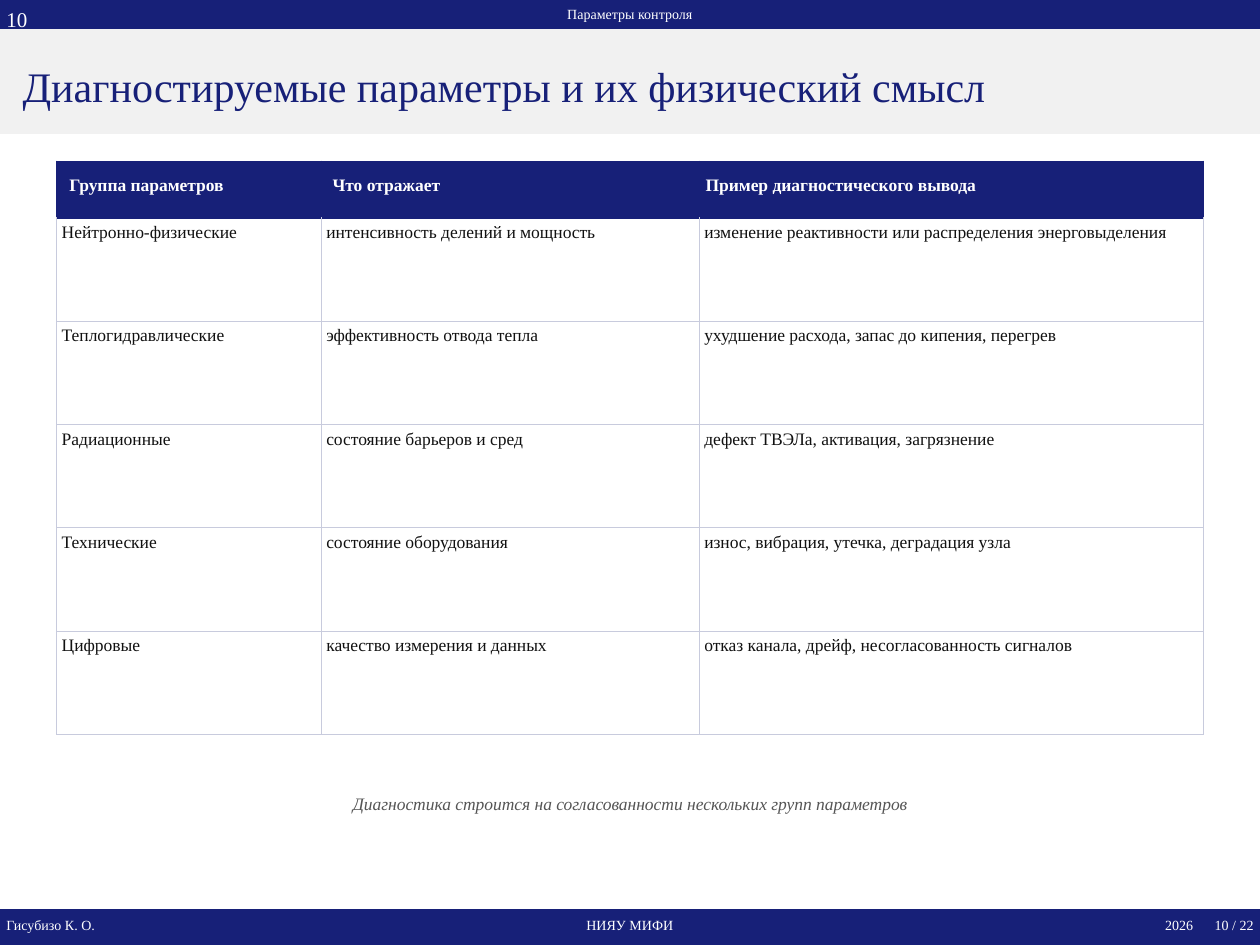
from lxml import etree
from pptx import Presentation
from pptx.dml.color import RGBColor
from pptx.enum.shapes import MSO_SHAPE
from pptx.enum.text import MSO_ANCHOR, PP_ALIGN
from pptx.oxml.ns import qn
from pptx.util import Inches, Pt

RECT = MSO_SHAPE.RECTANGLE
TOP, MIDDLE = MSO_ANCHOR.TOP, MSO_ANCHOR.MIDDLE
LEFT, CENTER, RIGHT = PP_ALIGN.LEFT, PP_ALIGN.CENTER, PP_ALIGN.RIGHT
NAVY, WHITE, GREY = "172078", "FFFFFF", "F1F1F1"
INK, MUTED, RULE = "111111", "555555", "C8CBDD"
FONT = "Times New Roman"


def color(target, tone):
    target.rgb = RGBColor.from_string(tone)


def write(frame, text, size, tone, align=LEFT, bold=False, italic=False):
    para = frame.paragraphs[0]
    para.alignment = align
    run = para.add_run()
    run.text = text
    run.font.name = FONT
    run.font.size = Pt(size)
    run.font.bold = bold
    run.font.italic = italic
    color(run.font.color, tone)


deck = Presentation()
deck.slide_width = Inches(10)
deck.slide_height = Inches(7.5)
slide = deck.slides.add_slide(deck.slide_layouts[6])

for top, height, tone in [(0, 0.24, NAVY), (0.24, 0.82, GREY), (7.22, 0.28, NAVY)]:
    band = slide.shapes.add_shape(RECT, 0, Inches(top), Inches(10), Inches(height))
    band.shadow.inherit = False
    band.fill.solid()
    color(band.fill.fore_color, tone)
    color(band.line.color, tone)
    band.line.width = Pt(1)

labels = [
    (0.2, 0.04, 9.6, 0.14, "Параметры контроля", 8, WHITE, CENTER, False),
    (0.18, 0.37, 9.6, 0.62, "Диагностируемые параметры и их физический смысл", 24, NAVY, LEFT, False),
    (0.05, 7.27, 2.4, 0.14, "Гисубизо К. О.", 8, WHITE, LEFT, False),
    (3.85, 7.27, 2.3, 0.14, "НИЯУ МИФИ", 8, WHITE, CENTER, False),
    (8.47, 7.27, 1, 0.14, "2026", 8, WHITE, RIGHT, False),
    (9.5, 7.27, 0.45, 0.14, "10 / 22", 8, WHITE, RIGHT, False),
    (0.8, 6.25, 8.4, 0.25, "Диагностика строится на согласованности нескольких групп параметров",
     10, MUTED, CENTER, True),
    (0.05, 0.05, 0.18, 0.2, "10", 12, WHITE, LEFT, False),
]
for left, top, width, height, text, size, tone, align, italic in labels:
    label = slide.shapes.add_textbox(Inches(left), Inches(top), Inches(width), Inches(height))
    frame = label.text_frame
    frame.word_wrap = True
    frame.vertical_anchor = MIDDLE
    frame.margin_left = frame.margin_right = frame.margin_top = frame.margin_bottom = 0
    write(frame, text, size, tone, align, italic=italic)

rows = [
    ("Группа параметров", "Что отражает", "Пример диагностического вывода"),
    ("Нейтронно-физические", "интенсивность делений и мощность",
     "изменение реактивности или распределения энерговыделения"),
    ("Теплогидравлические", "эффективность отвода тепла",
     "ухудшение расхода, запас до кипения, перегрев"),
    ("Радиационные", "состояние барьеров и сред", "дефект ТВЭЛа, активация, загрязнение"),
    ("Технические", "состояние оборудования", "износ, вибрация, утечка, деградация узла"),
    ("Цифровые", "качество измерения и данных",
     "отказ канала, дрейф, несогласованность сигналов"),
]
widths = [2.1, 3, 4]
indents = [0.1, 0.09, 0.05]
table = slide.shapes.add_table(
    len(rows), len(widths), Inches(0.45), Inches(1.28), Inches(9.1), Inches(4.55)
).table
table.horz_banding = False
for col, width in zip(table.columns, widths):
    col.width = Inches(width)

for r, texts in enumerate(rows):
    head = r == 0
    table.rows[r].height = Inches(0.45 if head else 0.82)
    for c, text in enumerate(texts):
        cell = table.cell(r, c)
        cell.margin_left = Inches(indents[c] if head else 0.04)
        cell.margin_right = cell.margin_top = Inches(0.04)
        cell.margin_bottom = Inches(0.11 if head else 0.04)
        cell.vertical_anchor = MIDDLE if head else TOP
        write(cell.text_frame, text, 10, WHITE if head else INK, bold=head)
        props = cell._tc.get_or_add_tcPr()
        for side in ("lnL", "lnR", "lnT", "lnB"):
            navy = head or (r == 1 and side == "lnT")
            edge = etree.SubElement(props, qn(f"a:{side}"), w=str(Pt(0.75)))
            fill = etree.SubElement(edge, qn("a:solidFill"))
            etree.SubElement(fill, qn("a:srgbClr"), val=NAVY if navy else RULE)
        cell.fill.solid()
        color(cell.fill.fore_color, NAVY if head else WHITE)

deck.save("out.pptx")
